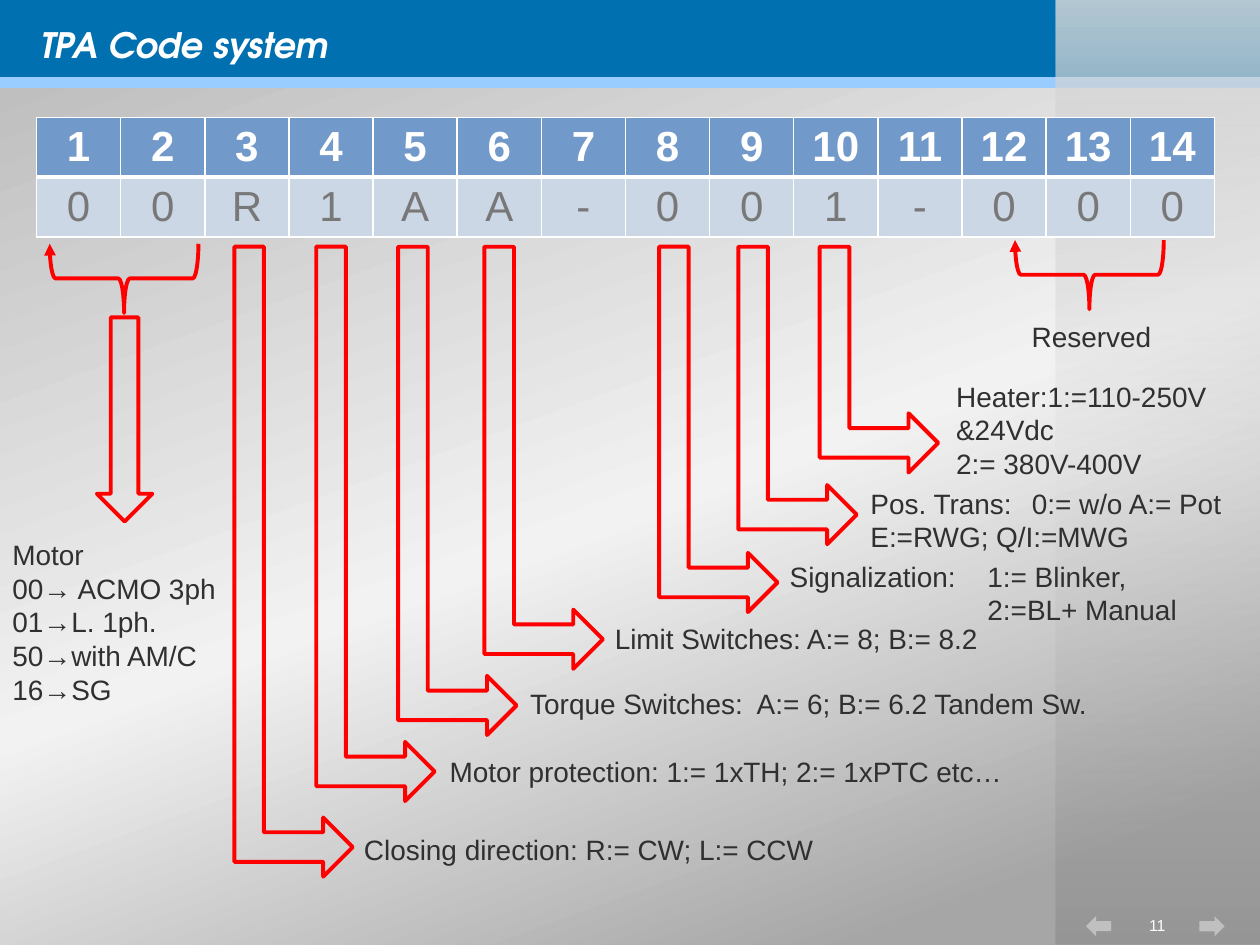
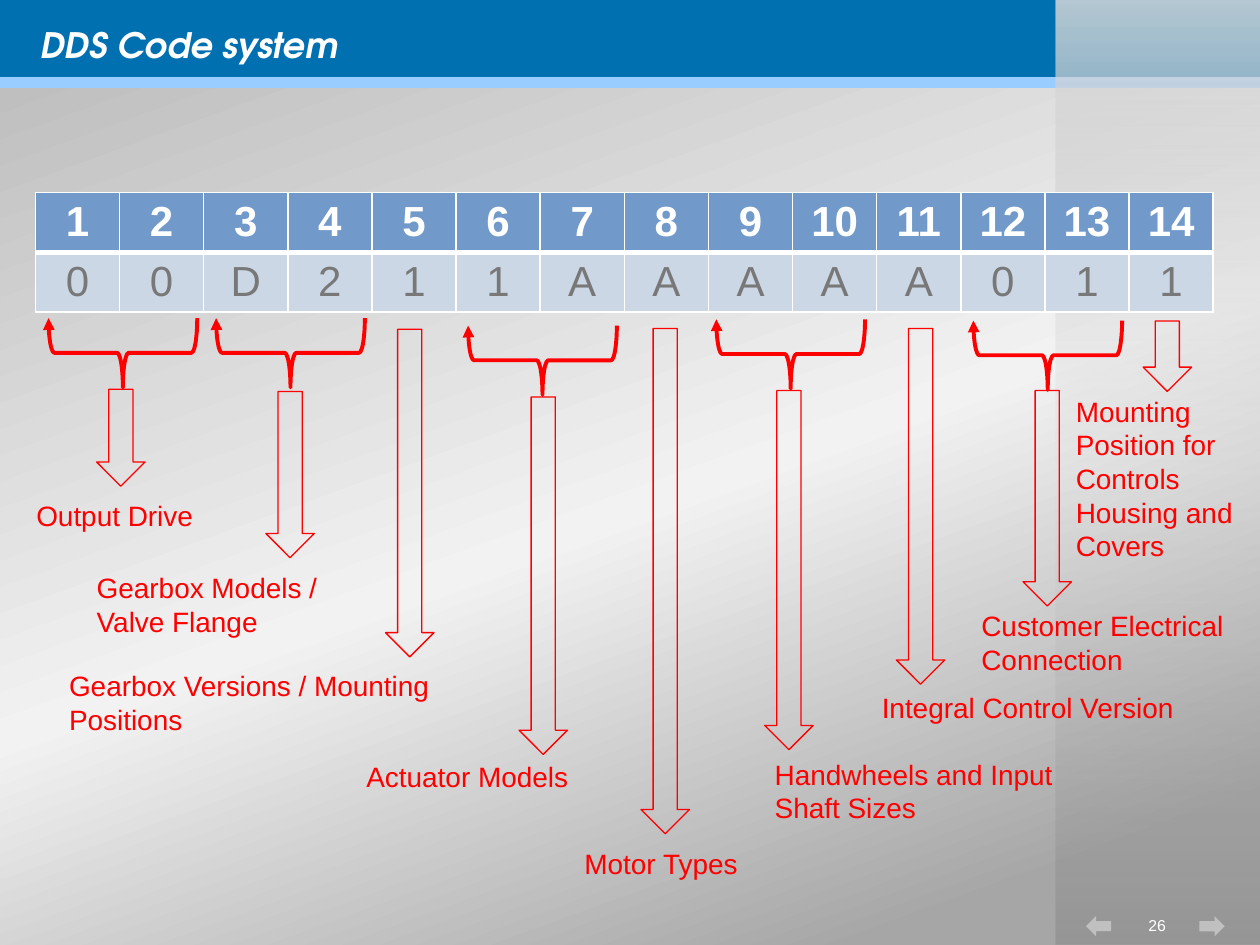
from lxml import etree
from pptx import Presentation
from pptx.dml.color import RGBColor
from pptx.enum.shapes import MSO_CONNECTOR, MSO_SHAPE
from pptx.enum.text import MSO_ANCHOR, MSO_AUTO_SIZE, PP_ALIGN
from pptx.oxml.ns import qn
from pptx.util import Pt

RECTANGLE = MSO_SHAPE.RECTANGLE
LEFT_ARROW = MSO_SHAPE.LEFT_ARROW
DOWN_ARROW = MSO_SHAPE.DOWN_ARROW
BENT_ARROW = MSO_SHAPE.BENT_UP_ARROW
BRACE = MSO_SHAPE.RIGHT_BRACE
STRAIGHT = MSO_CONNECTOR.STRAIGHT
LEFT, CENTER = PP_ALIGN.LEFT, PP_ALIGN.CENTER
MIDDLE = MSO_ANCHOR.MIDDLE
NO_FIT, FIT_BOX = MSO_AUTO_SIZE.NONE, MSO_AUTO_SIZE.SHAPE_TO_FIT_TEXT

WHITE = RGBColor(0xFF, 0xFF, 0xFF)
BLUE = RGBColor(0x00, 0x70, 0xB0)
LIGHT_BLUE = RGBColor(0x99, 0xCC, 0xFF)
SILVER = RGBColor(0xC0, 0xC0, 0xC0)
RED = RGBColor(0xFF, 0x00, 0x00)
INK = RGBColor(0x30, 0x30, 0x30)
HEADER_FILL = RGBColor(0x71, 0x99, 0xC9)
CODE_FILL = RGBColor(0xCB, 0xD7, 0xE4)
CODE_INK = RGBColor(0x78, 0x78, 0x78)
GREY = RGBColor(0x80, 0x80, 0x80)
MID_GREY = RGBColor(0xBF, 0xBF, 0xBF)
DARK_GREY = RGBColor(0xA6, 0xA6, 0xA6)
PALE_GREY = RGBColor(0xD9, 0xD9, 0xD9)
NEAR_WHITE = RGBColor(0xF2, 0xF2, 0xF2)

PAGE_W, PAGE_H = 720, 540
TITLE_FONT = {"name": "TeX Gyre Adventor", "size": Pt(20), "bold": True, "italic": True}
LABEL_FONT = {"name": "Arial", "size": Pt(16)}
NUMBER_FONT = {"name": "Arial", "size": Pt(9)}
HEADER_FONT = {"name": "Arial", "size": Pt(24), "bold": True}
CODE_FONT = {"name": "Arial", "size": Pt(24), "bold": False}
TITLE_FRAME = {"vertical_anchor": MIDDLE, "word_wrap": True, "auto_size": NO_FIT}
LABEL_FRAME = {"word_wrap": True, "auto_size": FIT_BOX}

COLUMN_W, ROW_H = 48.09, 34.2
BRACE_W, BRACE_H = 85, 39.6
BENT_W, BENT_TOP = 67.7, 141
THICK, THIN = 2.25, 0.75


def apply(target, formats):
    for attribute, value in formats.items():
        setattr(target, attribute, value)


def points(*lengths):
    return [Pt(length) for length in lengths]


def write(frame, lines, font, color, align=LEFT, tab=None):
    for index, line in enumerate(lines):
        paragraph = frame.paragraphs[0] if index == 0 else frame.add_paragraph()
        paragraph.alignment = align
        if tab:
            tabs = etree.SubElement(paragraph._p.get_or_add_pPr(), qn("a:tabLst"))
            etree.SubElement(tabs, qn("a:tab"), pos=str(Pt(tab)), algn="l")
        run = paragraph.add_run()
        run.text = line
        apply(run.font, font)
        run.font.color.rgb = color


def filled(slide, kind, box, color=None):
    shape = slide.shapes.add_shape(kind, *points(*box))
    shape.shadow.inherit = False
    shape.line.fill.background()
    if color:
        shape.fill.solid()
        shape.fill.fore_color.rgb = color
    return shape


def shade(shape, angle, stops):
    shape.fill.gradient()
    shape.fill.gradient_angle = angle
    stop_list = shape.element.find(".//" + qn("a:gsLst"))
    for stop in list(stop_list):
        stop_list.remove(stop)
    for position, color, opacity in stops:
        stop = etree.SubElement(stop_list, qn("a:gs"), pos=str(position * 1000))
        tint = etree.SubElement(stop, qn("a:srgbClr"), val=str(color))
        etree.SubElement(tint, qn("a:alpha"), val=str(opacity * 1000))


def backdrop(slide, number):
    body = filled(slide, RECTANGLE, (0, 49.7, PAGE_W, PAGE_H - 49.7))
    shade(body, 290, [(0, MID_GREY, 100), (50, NEAR_WHITE, 100), (89, DARK_GREY, 100)])
    filled(slide, RECTANGLE, (0, 0, PAGE_W, 49), BLUE)
    rule = slide.shapes.add_connector(STRAIGHT, *points(0, 47, PAGE_W, 47))
    rule.line.color.rgb = LIGHT_BLUE
    rule.line.width = Pt(6)
    etree.SubElement(rule.element.spPr, qn("a:effectLst"))
    side_band = filled(slide, RECTANGLE, (603, 0, PAGE_W - 603, PAGE_H))
    shade(side_band, 90, [(0, GREY, 44), (50, MID_GREY, 0), (100, PALE_GREY, 83)])
    for left, turn in ((620.6, 0), (685.4, 180)):
        filled(slide, LEFT_ARROW, (left, 523.5, 14.4, 11.5), SILVER).rotation = turn
    page = slide.shapes.add_textbox(*points(604.8, 518.4, 113, 20.9)).text_frame
    apply(page, TITLE_FRAME)
    write(page, [str(number)], NUMBER_FONT, WHITE, CENTER)


def code_slide(deck, title, number):
    slide = deck.slides.add_slide(deck.slide_layouts[5])
    backdrop(slide, number)
    heading = slide.shapes.title
    slide.shapes.element.append(heading.element)
    box = points(15.8, 8.6, 670.3, 33.8)
    apply(heading, dict(zip(("left", "top", "width", "height"), box)))
    apply(heading.text_frame, TITLE_FRAME)
    write(heading.text_frame, [title], TITLE_FONT, WHITE)
    return slide


def border(cell, widths):
    properties = cell._tc.get_or_add_tcPr()
    for side, width in widths.items():
        edge = etree.SubElement(properties, qn("a:ln" + side), w=str(Pt(width)))
        paint = etree.SubElement(edge, qn("a:solidFill"))
        etree.SubElement(paint, qn("a:srgbClr"), val=str(WHITE))


def code_table(slide, left, top, code):
    count = len(code)
    box = points(left, top, COLUMN_W * count, ROW_H * 2)
    table = slide.shapes.add_table(2, count, *box).table
    rows = (
        (range(1, count + 1), HEADER_FONT, WHITE, HEADER_FILL, {"L": 1, "R": 1, "T": 1, "B": 3}),
        (code, CODE_FONT, CODE_INK, CODE_FILL, {"L": 1, "R": 1, "T": 3, "B": 1}),
    )
    for row, (values, font, ink, fill, edges) in enumerate(rows):
        table.rows[row].height = Pt(ROW_H)
        for column, value in enumerate(values):
            table.columns[column].width = Pt(COLUMN_W)
            cell = table.cell(row, column)
            write(cell.text_frame, [str(value)], font, ink, CENTER)
            border(cell, edges)
            cell.fill.solid()
            cell.fill.fore_color.rgb = fill


def outline(slide, kind, box, weight):
    shape = slide.shapes.add_shape(kind, *points(*box))
    shape.shadow.inherit = False
    shape.fill.background()
    shape.line.color.rgb = RED
    shape.line.width = Pt(weight)
    return shape


def quarter_turned(slide, kind, left, top, width, height):
    shift = (width - height) / 2
    shape = outline(slide, kind, (left + shift, top - shift, height, width), THICK)
    shape.rotation = 90
    return shape


def brace(slide, left, top):
    bracket = quarter_turned(slide, BRACE, left, top, BRACE_W, BRACE_H)
    etree.SubElement(bracket.line._get_or_add_ln(), qn("a:tailEnd"), type="triangle")


def label(slide, box, lines, color, tab=None):
    frame = slide.shapes.add_textbox(*points(*box)).text_frame
    apply(frame, LABEL_FRAME)
    write(frame, lines, LABEL_FONT, color, tab=tab)


def tpa_slide(deck):
    slide = code_slide(deck, "TPA Code system", 11)
    code_table(slide, 20.9, 67, "00R1AA-001-000")
    brace(slide, 28.4, 139.3)
    brace(slide, 580, 137.2)
    outline(slide, DOWN_ARROW, (55.4, 181.4, 31.7, 116.6), THICK)
    bent_arrows = (
        (133.9, 360), (180.7, 316.8), (227.5, 279), (276.8, 241.2),
        (376.6, 208.8), (421.9, 170), (468.4, 129),
    )
    for left, height in bent_arrows:
        quarter_turned(slide, BENT_ARROW, left, BENT_TOP, BENT_W, height)
    meanings = (
        ((0, 303.8, 133.2, 123.8),
         ["Motor", "00→ ACMO 3ph", "01→L. 1ph.", "50→with AM/C", "16→SG"], None),
        ((200.9, 472.3, 303.8, 26.6), ["Closing direction: R:= CW; L:= CCW"], None),
        ((249.8, 427.7, 445.7, 26.6), ["Motor protection: 1:= 1xTH; 2:= 1xPTC etc…"], None),
        ((295.9, 388.8, 389.5, 26.6), ["Torque Switches:  A:= 6; B:= 6.2 Tandem Sw."], None),
        ((344.2, 351.4, 303.8, 26.6), ["Limit Switches: A:= 8; B:= 8.2"], None),
        ((444.2, 316.1, 275, 46.1), ["Signalization: \t1:= Blinker,", "\t2:=BL+ Manual"], 113),
        ((490.3, 274.3, 229, 46.1),
         ["Pos. Trans: \t0:= w/o A:= Pot", "E:=RWG; Q/I:=MWG"], 92.2),
        ((539.3, 213.1, 167, 65.5), ["Heater:1:=110-250V &24Vdc", "2:= 380V-400V"], None),
        ((582.5, 179.3, 100.8, 26.6), ["Reserved"], None),
    )
    for box, lines, tab in meanings:
        label(slide, box, lines, INK, tab)


def dds_slide(deck):
    slide = code_slide(deck, "DDS Code system", 26)
    code_table(slide, 20.2, 110, "00D211AAAAA011")
    braces = ((27.7, 181.8), (123.5, 181.8), (267.5, 186.1), (409.3, 182.5), (556.2, 183.2))
    for left, top in braces:
        brace(slide, left, top)
    fields = (
        (55.2, 222.5, 55.4, (13.7, 281.5, 112.3, 46.1), ["Output Drive"]),
        (151.9, 223.7, 95, (48.2, 322.6, 157, 46.1), ["Gearbox Models /", "Valve Flange"]),
        (220.3, 188.2, 187.2, (32.4, 378.7, 237.6, 46.1),
         ["Gearbox Versions / Mounting", "Positions"]),
        (296.6, 226.8, 204.3, (202.3, 430.6, 149, 26.6), ["Actuator Models"]),
        (366.3, 187.7, 288.7, (326.9, 480.2, 109.4, 26.6), ["Motor Types"]),
        (437, 223.2, 205.2, (435.6, 429.1, 187.9, 46.1),
         ["Handwheels and Input", "Shaft Sizes"]),
        (512.2, 187.7, 203.3, (496.8, 391, 198.7, 26.6), ["Integral Control Version"]),
        (584.6, 223.2, 123.1, (553.7, 344.2, 166.3, 46.1),
         ["Customer Electrical Connection"]),
        (653.2, 183.5, 40.2, (607.7, 221.8, 112.3, 123.8),
         ["Mounting Position for Controls Housing and Covers"]),
    )
    for left, top, height, box, lines in fields:
        outline(slide, DOWN_ARROW, (left, top, 27.7, height), THIN)
        label(slide, box, lines, RED)


def main():
    deck = Presentation()
    deck.slide_width, deck.slide_height = points(PAGE_W, PAGE_H)
    tpa_slide(deck)
    dds_slide(deck)
    deck.save("out.pptx")


if __name__ == "__main__":
    main()
